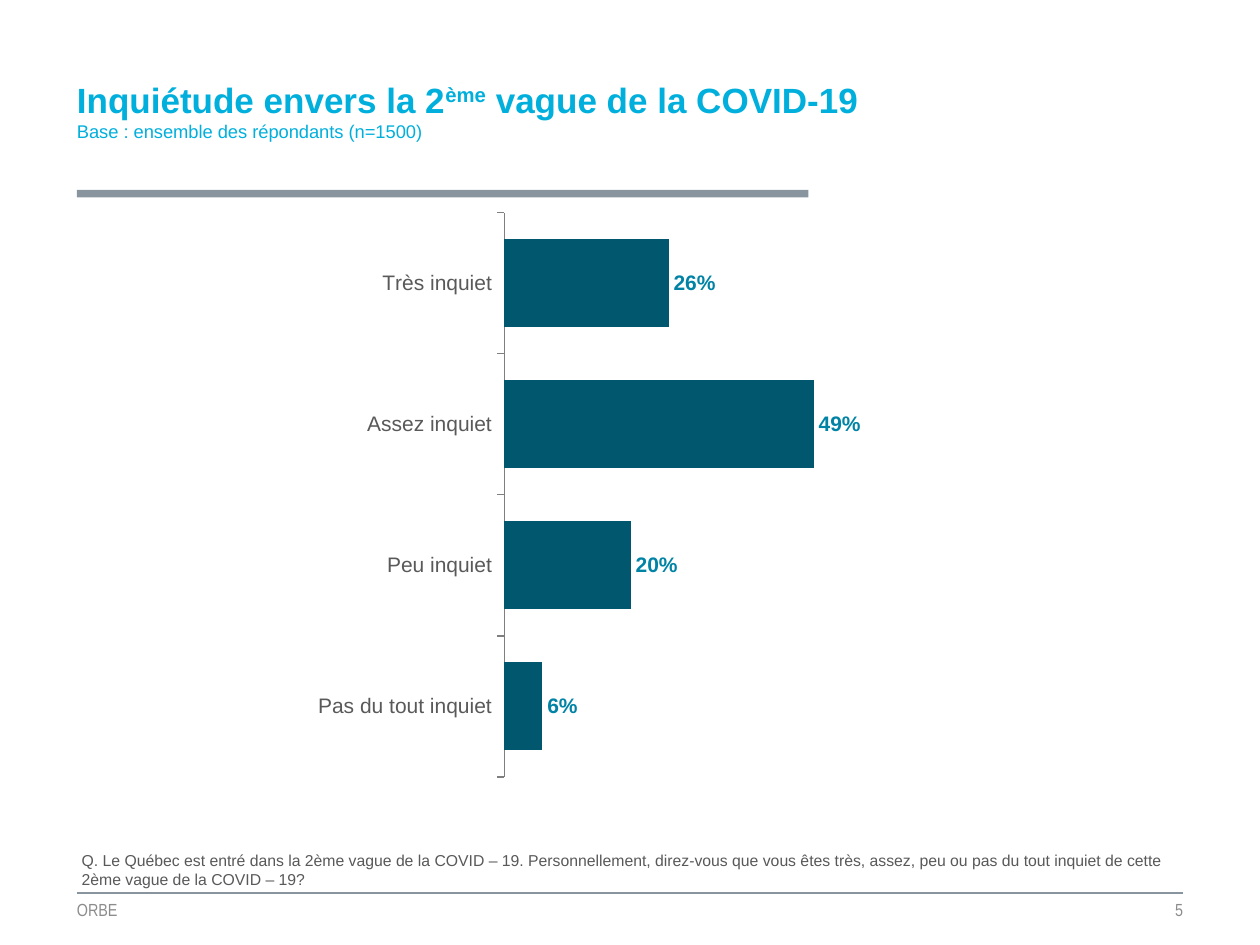
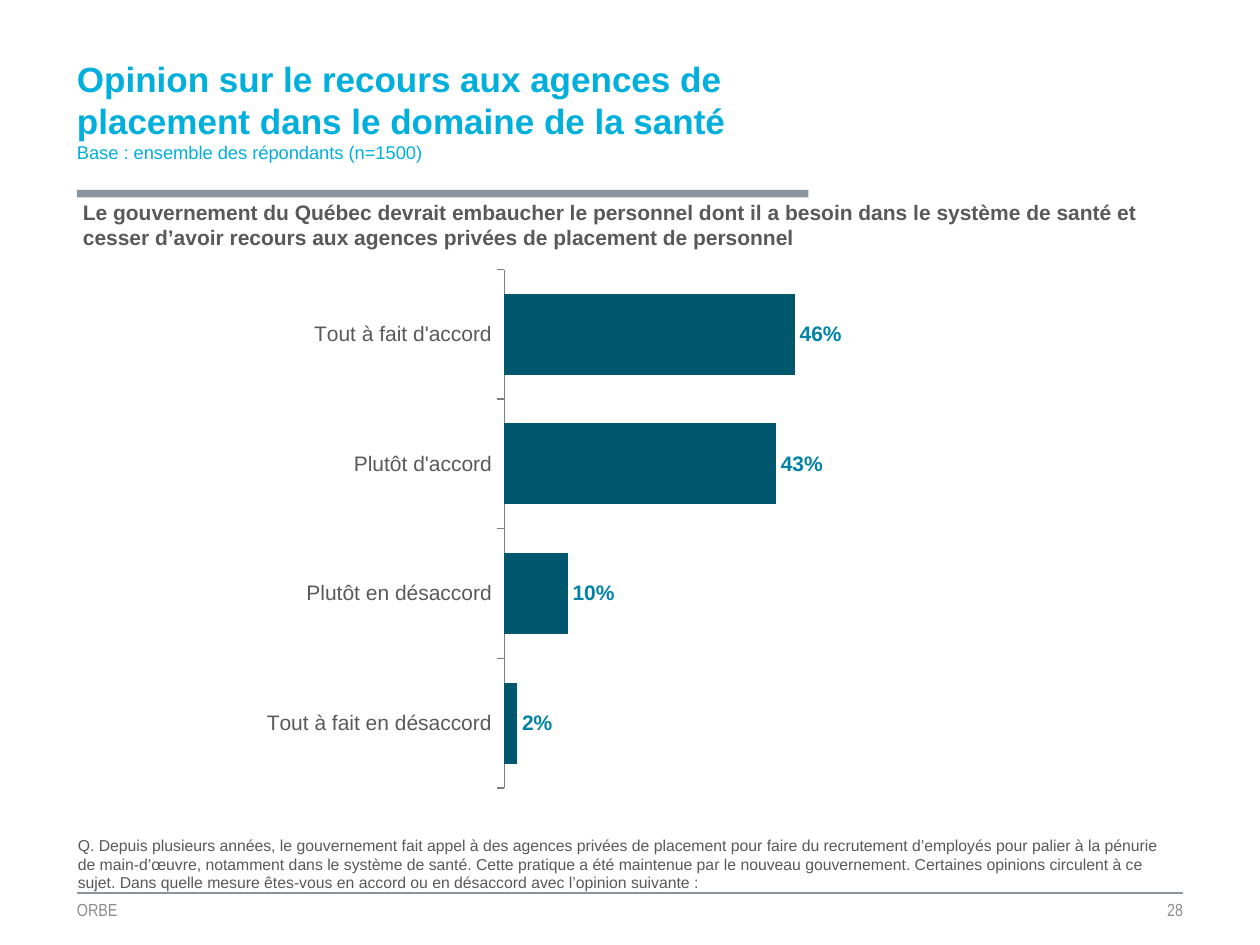
from lxml import etree
from pptx import Presentation
from pptx.chart.data import CategoryChartData
from pptx.dml.color import RGBColor
from pptx.enum.chart import XL_CHART_TYPE, XL_LABEL_POSITION, XL_TICK_MARK
from pptx.enum.shapes import MSO_CONNECTOR, MSO_SHAPE
from pptx.enum.text import MSO_ANCHOR, PP_ALIGN
from pptx.oxml.ns import qn
from pptx.util import Pt

BAR_CLUSTERED = XL_CHART_TYPE.BAR_CLUSTERED
OUTSIDE_END = XL_LABEL_POSITION.OUTSIDE_END
TICK_OUTSIDE, TICK_NONE = XL_TICK_MARK.OUTSIDE, XL_TICK_MARK.NONE
STRAIGHT, RECTANGLE = MSO_CONNECTOR.STRAIGHT, MSO_SHAPE.RECTANGLE
TOP, MIDDLE = MSO_ANCHOR.TOP, MSO_ANCHOR.MIDDLE
LEFT, RIGHT = PP_ALIGN.LEFT, PP_ALIGN.RIGHT

CYAN = RGBColor(0x00, 0xAF, 0xDC)
SLATE = RGBColor(0x88, 0x95, 0x9E)
PETROL = RGBColor(0x00, 0x57, 0x6E)
TEAL = RGBColor(0x00, 0x83, 0xA5)
DARK_GREY = RGBColor(0x59, 0x59, 0x59)
MID_GREY = RGBColor(0x7F, 0x7F, 0x7F)
FOOTER_GREY = RGBColor(0x8C, 0x8C, 0x8C)

TITLE = {"name": "Arial", "size": Pt(20), "bold": True, "color": CYAN}
BASE = {"name": "Arial", "size": Pt(10.5), "bold": False, "color": CYAN}
QUESTION = {"name": "Arial", "size": Pt(9), "color": DARK_GREY}
STATEMENT = {"name": "Arial", "size": Pt(12), "bold": True, "color": DARK_GREY}
FOOTER = {"name": "Arial Narrow", "size": Pt(10), "color": FOOTER_GREY}
CHART_TEXT = {"name": "Arial", "size": Pt(10.5), "color": MID_GREY}
CATEGORY = {"name": "Arial", "size": Pt(12), "color": DARK_GREY}
BAR_LABEL = {"name": "Arial", "size": Pt(12), "bold": True, "color": TEAL}

MARGIN, CONTENT_WIDTH = 44, 632
BASE_TEXT = "Base : ensemble des répondants (n=1500)"
FOOTER_NAME = "ORBE"
NO_INSETS = (0, 0, 0, 0)
TITLE_INSETS = (0, 0, 0, 12)
BODY_INSETS = (7.2, 3.6, 7.2, 3.6)
PLOT_LAYOUT = {"layoutTarget": "inner", "xMode": "edge", "yMode": "edge",
               "x": 0.491, "y": 0.023, "w": 0.413, "h": 0.955}

SLIDES = [
    {
        "title": ["Inquiétude envers la 2", "ème", " vague de la COVID-19"],
        "title_width": 454,
        "number": "5",
        "chart_box": (31, 113.8, 524, 337.7),
        "answers": {"Très inquiet": 0.26, "Assez inquiet": 0.49,
                    "Peu inquiet": 0.2, "Pas du tout inquiet": 0.06},
        "question_box": (39.6, 482.4, 646, 28.8),
        "question": "Q. Le Québec est entré dans la 2ème vague de la COVID – 19. "
                    "Personnellement, direz-vous que vous êtes très, assez, peu ou "
                    "pas du tout inquiet de cette 2ème vague de la COVID – 19?",
    },
    {
        "title": ["Opinion sur le recours aux agences de placement "
                  "dans le domaine de la santé"],
        "title_width": 416,
        "number": "28",
        "statement": "Le gouvernement du Québec devrait embaucher le personnel dont "
                     "il a besoin dans le système de santé et cesser d’avoir recours "
                     "aux agences privées de placement de personnel",
        "chart_box": (31, 146.9, 524, 310.3),
        "answers": {"Tout à fait d'accord": 0.46, "Plutôt d'accord": 0.43,
                    "Plutôt en désaccord": 0.1, "Tout à fait en désaccord": 0.02},
        "question_box": (37.4, 473.8, 638.6, 40.3),
        "question": "Q. Depuis plusieurs années, le gouvernement fait appel à des "
                    "agences privées de placement pour faire du recrutement d’employés "
                    "pour palier à la pénurie de main-d’œuvre, notamment dans le "
                    "système de santé. Cette pratique a été maintenue par le nouveau "
                    "gouvernement. Certaines opinions circulent à ce sujet. Dans quelle "
                    "mesure êtes-vous en accord ou en désaccord avec l’opinion suivante :",
    },
]


def points(box):
    return [Pt(value) for value in box]


def format_font(font, style):
    for attribute, value in style.items():
        if attribute == "color":
            font.color.rgb = value
        else:
            setattr(font, attribute, value)


def add_run(paragraph, text, style):
    run = paragraph.add_run()
    run.text = text
    format_font(run.font, style)
    return run


def add_text(slide, box, text, style, insets=BODY_INSETS, anchor=TOP, alignment=LEFT):
    frame = slide.shapes.add_textbox(*points(box)).text_frame
    frame.word_wrap = True
    frame.vertical_anchor = anchor
    for side, inset in zip(("left", "top", "right", "bottom"), insets):
        setattr(frame, f"margin_{side}", Pt(inset))
    paragraph = frame.paragraphs[0]
    paragraph.alignment = alignment
    add_run(paragraph, text, style)
    return frame


def add_title(slide, box, parts):
    """Write the title, whose second part, if any, is superscript, and its base."""
    frame = add_text(slide, box, parts[0], TITLE, TITLE_INSETS, MIDDLE)
    for index, part in enumerate(parts[1:], start=1):
        run = add_run(frame.paragraphs[0], part, TITLE)
        if index == 1:
            run.font._element.set("baseline", "30000")
    add_run(frame.add_paragraph(), BASE_TEXT, BASE)


def add_title_band(slide, box):
    band = slide.shapes.add_shape(RECTANGLE, *points(box))
    band.shadow.inherit = False
    band.fill.solid()
    band.fill.fore_color.rgb = SLATE
    band.line.fill.background()


def add_footer(slide, box, number):
    left, top, width, height = box
    rule = slide.shapes.add_connector(STRAIGHT, *points((left, top, left + width, top)))
    rule.line.color.rgb = SLATE
    rule.line.width = Pt(1.5)
    etree.SubElement(rule._element.spPr, qn("a:effectLst"))
    half = width / 2
    for start, text, alignment in ((left, FOOTER_NAME, LEFT), (left + half, number, RIGHT)):
        add_text(slide, (start, top, half, height), text, FOOTER,
                 NO_INSETS, MIDDLE, alignment)


def set_plot_layout(chart):
    plot_area = chart._chartSpace.chart.plotArea
    for old_layout in plot_area.findall(qn("c:layout")):
        plot_area.remove(old_layout)
    layout = etree.Element(qn("c:layout"))
    manual = etree.SubElement(layout, qn("c:manualLayout"))
    for name, value in PLOT_LAYOUT.items():
        etree.SubElement(manual, qn(f"c:{name}")).set("val", str(value))
    plot_area.insert(0, layout)


def add_answer_chart(slide, box, answers):
    data = CategoryChartData(number_format="0%")
    data.categories = list(answers)
    data.add_series("Series 1", list(answers.values()))
    chart = slide.shapes.add_chart(BAR_CLUSTERED, *points(box), data).chart
    chart.has_legend = False
    chart.has_title = False
    format_font(chart.font, CHART_TEXT)
    set_plot_layout(chart)

    category_axis = chart.category_axis
    category_axis.reverse_order = True
    category_axis.major_tick_mark = TICK_OUTSIDE
    category_axis.minor_tick_mark = TICK_NONE
    category_axis.format.line.color.rgb = MID_GREY
    category_axis.format.line.width = Pt(0.75)
    format_font(category_axis.tick_labels.font, CATEGORY)

    value_axis = chart.value_axis
    axis_format = {"minimum_scale": 0, "maximum_scale": 0.6, "major_unit": 0.2,
                   "has_major_gridlines": False, "visible": False}
    for attribute, value in axis_format.items():
        setattr(value_axis, attribute, value)

    plot = chart.plots[0]
    plot.gap_width = 60
    plot.vary_by_categories = False
    fill = plot.series[0].format.fill
    fill.solid()
    fill.fore_color.rgb = PETROL
    labels = plot.series[0].data_labels
    label_format = {"show_value": True, "position": OUTSIDE_END,
                    "number_format": "0%", "number_format_is_linked": False}
    for attribute, value in label_format.items():
        setattr(labels, attribute, value)
    format_font(labels.font, BAR_LABEL)


def add_survey_slide(presentation, content):
    slide = presentation.slides.add_slide(presentation.slide_layouts[6])
    add_title_band(slide, (MARGIN, 108.6, 418, 4.3))
    add_footer(slide, (MARGIN, 510.4, CONTENT_WIDTH, 18.7), content["number"])
    add_title(slide, (MARGIN, 29.5, content["title_width"], 79.2), content["title"])
    add_answer_chart(slide, content["chart_box"], content["answers"])
    if "statement" in content:
        add_text(slide, (40.3, 110.2, 638.6, 36), content["statement"], STATEMENT)
    add_text(slide, content["question_box"], content["question"], QUESTION)


def main():
    presentation = Presentation()
    presentation.slide_width = Pt(720)
    presentation.slide_height = Pt(540)
    for content in SLIDES:
        add_survey_slide(presentation, content)
    presentation.save("out.pptx")


if __name__ == "__main__":
    main()
